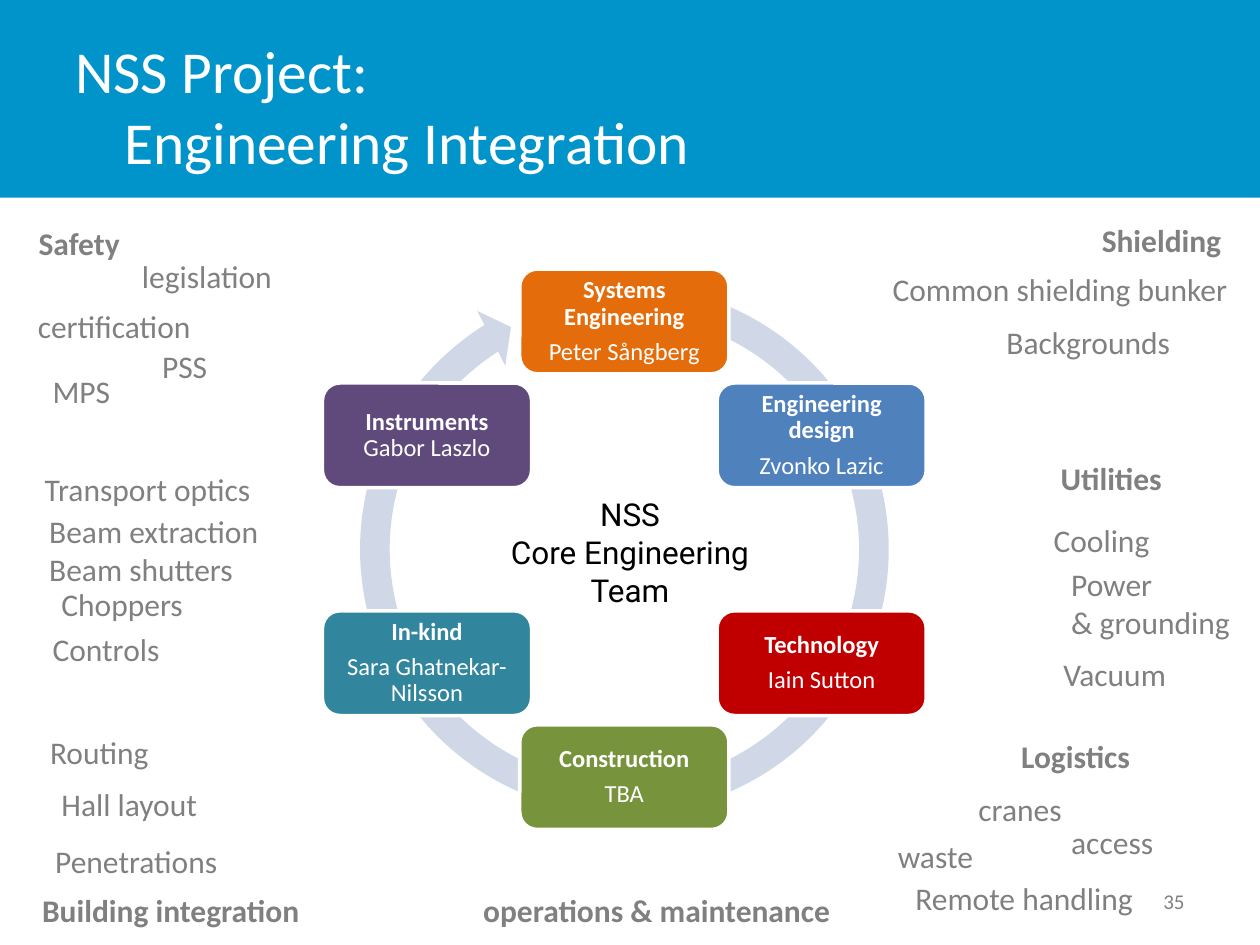
import math
import pptx
import pptx.util
import pptx.dml.color
import pptx.enum.shapes
import pptx.enum.text

Pt = pptx.util.Pt
SHAPE = pptx.enum.shapes.MSO_SHAPE
ALIGN = pptx.enum.text.PP_ALIGN
ANCHOR = pptx.enum.text.MSO_ANCHOR

# Content
TITLE = "NSS Project:\vEngineering Integration"
NUMBER = "35"
CORE = ["NSS", "Core Engineering", "Team"]

# Team boxes, clockwise from the top: role, person, colour, on one paragraph
TEAM = [
    ("Systems Engineering", "Peter Sångberg", "E46C0A", False),
    ("Engineering design", "Zvonko Lazic", "4F81BD", False),
    ("Technology", "Iain Sutton", "C00000", False),
    ("Construction", "TBA", "77933C", False),
    ("In-kind", "Sara Ghatnekar-Nilsson", "31859C", False),
    ("Instruments", "Gabor Laszlo", "604A7B", True),
]

# Topics around the ring: text, left, top, width
HEADS = [
    ("Safety", 15, 124.5, 61),
    ("Shielding", 622.5, 122.5, 84),
    ("Utilities", 599, 259, 77),
    ("Logistics", 576.5, 417.5, 78),
    ("Building integration", 17, 505.5, 163),
    ("operations & maintenance", 269, 505.5, 215),
]
TOPICS = [
    ("legislation", 74, 143.5, 90),
    ("certification", 14.5, 172, 103),
    ("PSS", 85.5, 194.5, 40),
    ("MPS", 23, 209, 47.5),
    ("Transport optics", 18.5, 265, 133),
    ("Beam extraction", 21, 289, 140),
    ("Beam shutters", 21, 310.5, 121),
    ("Choppers", 28, 330.5, 85),
    ("Controls", 23, 356.5, 81),
    ("Routing", 21.5, 415.5, 71),
    ("Hall layout", 28, 445, 93),
    ("Penetrations", 24.5, 477.5, 113),
    ("Common shielding bunker", 503, 151, 208),
    ("Backgrounds", 568, 181, 109),
    ("Cooling", 595, 294, 70),
    ("Power\n& grounding", 605, 319.5, 106.5),
    ("Vacuum", 600.5, 371, 74),
    ("cranes", 552, 448, 63),
    ("access", 605, 466.5, 62),
    ("waste", 506, 474.5, 58),
    ("Remote handling", 516, 499, 140.5),
]

THEME = {
    "band": "0094CA", "ring": "D0D8E8", "white": "FFFFFF",
    "grey": "808080", "black": "000000",
    "font": "Calibri", "core": "Roboto",
    "big": 34, "mid": 18, "small": 14, "tiny": 12,
}
MID_X, MID_Y, RADIUS = 356.8, 313.9, 130.2
BOX_W, BOX_H, RING = 119.5, 59.8, 320.4


def tint(name):
    return pptx.dml.color.RGBColor.from_string(THEME.get(name, name))


def put(item, form):
    for key, val in form.items():
        setattr(item, key, val)


def style(run, size, color, bold=False, face="font"):
    put(run.font, {"name": THEME[face], "size": Pt(THEME[size]), "bold": bold})
    run.font.color.rgb = tint(color)


def shape(slide, kind, place, fill, edge=None):
    item = slide.shapes.add_shape(kind, *map(Pt, place))
    item.shadow.inherit = False
    item.fill.solid()
    item.fill.fore_color.rgb = tint(fill)
    if edge:
        item.line.color.rgb = tint(edge)
        item.line.width = Pt(2)
    else:
        item.line.fill.background()
    return item


def label(slide, text, place, size, color, bold=False, face="font",
          align=ALIGN.LEFT, **form):
    frame = slide.shapes.add_textbox(*map(Pt, place)).text_frame
    put(frame, {"word_wrap": False, **form})
    frame.text = text
    for para in frame.paragraphs:
        para.alignment = align
        for run in para.runs:
            style(run, size, color, bold, face)
    return frame


def member(slide, spot, role, person, fill, joined):
    angle = math.radians(60 * spot - 90)
    left = MID_X + RADIUS * math.cos(angle) - BOX_W / 2
    top = MID_Y + RADIUS * math.sin(angle) - BOX_H / 2
    item = shape(slide, SHAPE.ROUNDED_RECTANGLE, (left, top, BOX_W, BOX_H),
                 fill, "white")
    frame = item.text_frame
    put(frame, {"word_wrap": True, "vertical_anchor": ANCHOR.MIDDLE})
    put(frame, {"margin_" + side: Pt(4.2)
                for side in ("left", "right", "top", "bottom")})
    para = frame.paragraphs[0]
    for text, bold in ((role, True), (person, False)):
        if not bold and joined:
            para.add_line_break()
        elif not bold:
            para = frame.add_paragraph()
        run = para.add_run()
        run.text = text
        style(run, "small", "white", bold)
    for para in frame.paragraphs:
        put(para, {"alignment": ALIGN.CENTER, "line_spacing": 0.9,
                   "space_after": Pt(5)})


def main():
    deck = pptx.Presentation()
    put(deck, {"slide_width": Pt(720), "slide_height": Pt(540)})
    slide = deck.slides.add_slide(deck.slide_layouts[6])

    # Title band, second line indented
    shape(slide, SHAPE.RECTANGLE, (0, 0, 720, 113), "band")
    title = label(slide, TITLE, (36, 15, 598, 90), "big", "white",
                  word_wrap=True, vertical_anchor=ANCHOR.MIDDLE)
    props = title.paragraphs[0]._p.get_or_add_pPr()
    for key, val in (("marL", Pt(28)), ("indent", Pt(-28))):
        props.set(key, str(val))

    # Ring arrow and team
    ring = shape(slide, SHAPE.CIRCULAR_ARROW,
                 (MID_X - RING / 2, MID_Y - RING / 2, RING, RING), "ring")
    for spot, val in enumerate((0.053, 3.126, 142.646, 171.057, 0.055)):
        ring.adjustments[spot] = val
    for spot, row in enumerate(TEAM):
        member(slide, spot, *row)
    label(slide, "\n".join(CORE), (274.5, 279.5, 171, 72.5), "mid", "black",
          face="core", align=ALIGN.CENTER)

    # Topics
    for rows, bold in ((HEADS, True), (TOPICS, False)):
        for text, left, top, width in rows:
            high = 29 + 22 * text.count("\n")
            label(slide, text, (left, top, width, high), "mid", "grey", bold)

    # Slide number
    label(slide, NUMBER, (516, 500.5, 168, 29), "tiny", "grey",
          align=ALIGN.RIGHT, word_wrap=True, vertical_anchor=ANCHOR.MIDDLE)
    deck.save("out.pptx")


if __name__ == "__main__":
    main()
